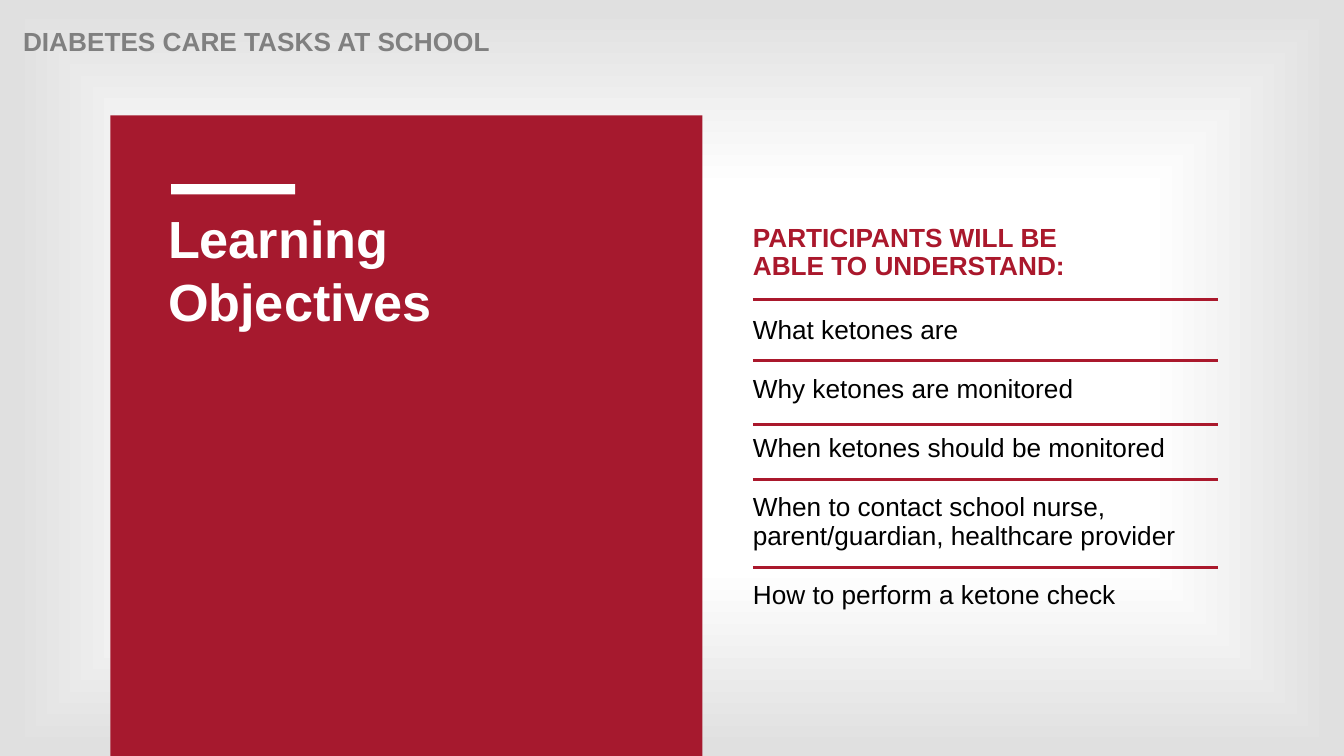
from pptx import Presentation
from pptx import util as u
from pptx import oxml
from pptx.dml import color
from pptx.enum import shapes, text
from pptx.oxml import ns

Pt = u.Pt
RED = "AA182C"


def rgb(code):
    return color.RGBColor.from_string(code)


def write(para, words, size=18.7, tint="000000", bold=False, lead=None, gap=0):
    para.text = words
    para.font.name = "Arial"
    para.font.size = Pt(size)
    para.font.bold = bold
    para.font.color.rgb = rgb(tint)
    para.space_before = Pt(gap)
    if lead:
        para.line_spacing = lead


class Deck:
    def __init__(self, wide, high):
        self.show = Presentation()
        self.show.slide_width = Pt(wide)
        self.show.slide_height = Pt(high)
        self.slide = self.show.slides.add_slide(self.show.slide_layouts[6])

    def glow(self, stops):
        self.slide.background.fill.solid()
        old = self.slide.element.find(".//" + ns.qn("a:solidFill"))
        marks = "".join(
            f'<a:gs pos="{at * 1000}"><a:srgbClr val="{tint}"/></a:gs>'
            for at, tint in stops
        )
        new = oxml.parse_xml(
            f'<a:gradFill {ns.nsdecls("a")} rotWithShape="1">'
            f"<a:gsLst>{marks}</a:gsLst>"
            '<a:path path="shape"><a:fillToRect l="50000" t="50000" '
            'r="50000" b="50000"/></a:path></a:gradFill>'
        )
        old.getparent().replace(old, new)

    def block(self, x, y, w, h, tint):
        box = self.slide.shapes.add_shape(
            shapes.MSO_SHAPE.RECTANGLE, Pt(x), Pt(y), Pt(w), Pt(h)
        )
        box.shadow.inherit = False
        box.fill.solid()
        box.fill.fore_color.rgb = rgb(tint)
        box.line.fill.background()

    def words(self, x, y, w, h, items, gap=0, pad=(0, 0), **style):
        frame = self.slide.shapes.add_textbox(Pt(x), Pt(y), Pt(w), Pt(h)).text_frame
        frame.word_wrap = True
        frame.vertical_anchor = text.MSO_ANCHOR.TOP
        frame.margin_left = frame.margin_right = Pt(pad[0])
        frame.margin_top = frame.margin_bottom = Pt(pad[1])
        for i, item in enumerate(items):
            para = frame.add_paragraph() if i else frame.paragraphs[0]
            write(para, item, gap=gap if i else 0, **style)

    def rule(self, x, y, w, tint, thick=2):
        line = self.slide.shapes.add_connector(
            shapes.MSO_CONNECTOR.STRAIGHT, Pt(x), Pt(y), Pt(x + w), Pt(y)
        )
        line.line.color.rgb = rgb(tint)
        line.line.width = Pt(thick)
        line.element.spPr.append(oxml.parse_xml(f'<a:effectLst {ns.nsdecls("a")}/>'))


def main():
    deck = Deck(960, 540)
    deck.glow([(12, "FFFFFF"), (50, "FFFFFF"), (98, "E0E0E0")])
    deck.block(78.8, 82.5, 423, 457.5, "A6192E")
    deck.block(122.2, 131.6, 88.6, 7.2, "FFFFFF")
    deck.words(9.4, 17.3, 792, 20.2, ["DIABETES CARE TASKS AT SCHOOL"],
               pad=(7.2, 3.6), tint="808080", bold=True, lead=0.9)
    left, wide = 537.8, 332
    deck.words(left, 160.6, wide, 83.5,
               ["PARTICIPANTS WILL BE \vABLE TO UNDERSTAND:"],
               tint=RED, bold=True, lead=0.9)
    deck.words(113, 144, 350.6, 140.4, ["Learning Objectives"],
               pad=(7.2, 3.6), size=37.3, tint="FFFFFF", bold=True)
    goals = [
        "What ketones are",
        "Why ketones are monitored",
        "When ketones should be monitored",
        "When to contact school nurse, parent/guardian, healthcare provider",
        "How to perform a ketone check",
    ]
    deck.words(left, 226.1, wide, 211.7, goals, gap=22.1, lead=0.9)
    for y in (214.2, 257.5, 303.1, 342.5, 405.3):
        deck.rule(left, y, wide, RED)
    deck.show.save("out.pptx")


if __name__ == "__main__":
    main()
